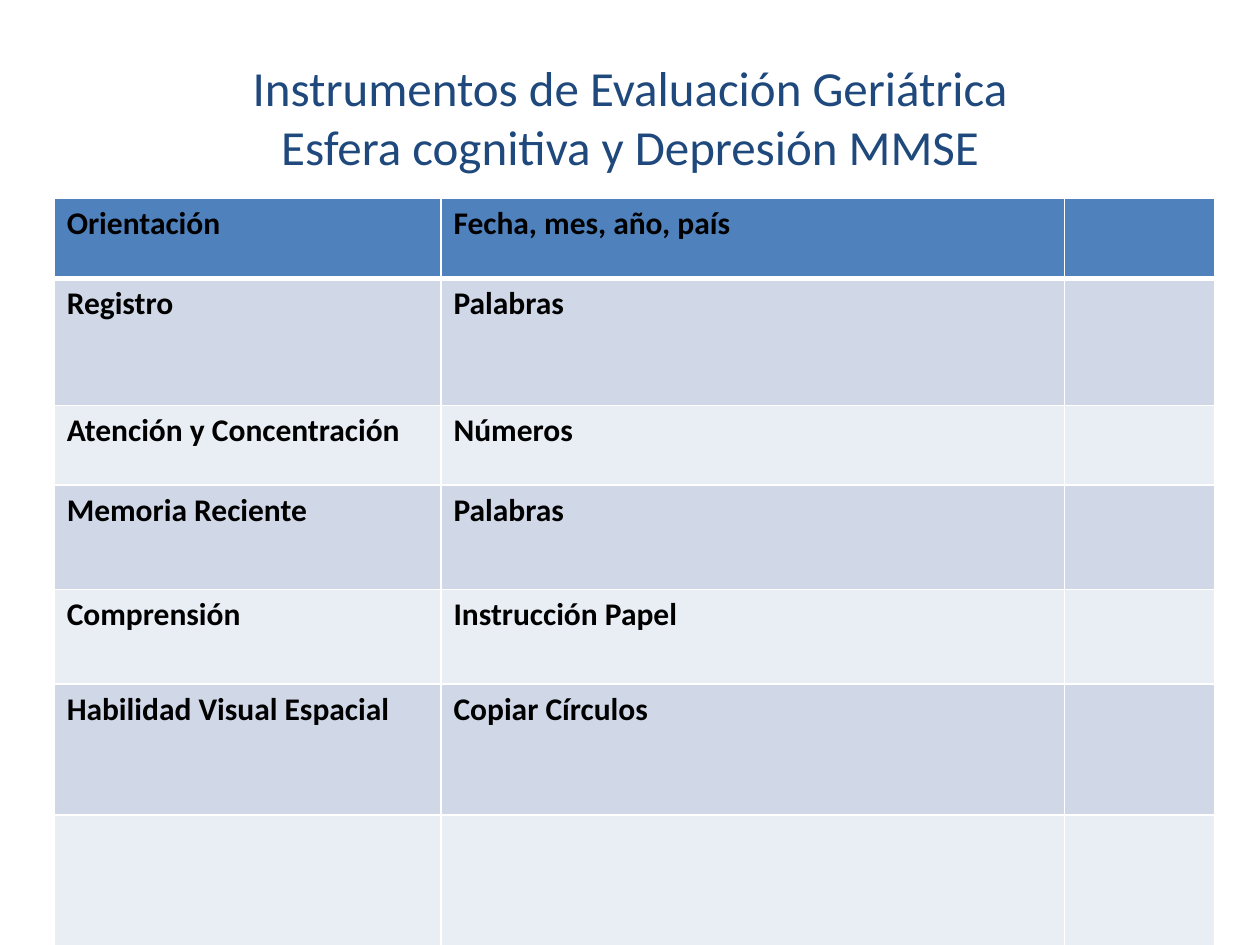
from pptx import Presentation
from pptx.dml.color import RGBColor
from pptx.enum.text import MSO_ANCHOR, PP_ALIGN
from pptx.oxml import parse_xml
from pptx.oxml.ns import nsdecls
from pptx.util import Inches, Pt

TITLE_LINES = ["Instrumentos de Evaluación Geriátrica",
               "Esfera cognitiva y Depresión MMSE"]
COLUMN_WIDTHS = [3.07, 4.95, 1.19]
# Row height, cognitive area, test
ROWS = [
    (0.64, "Orientación", "Fecha, mes, año, país"),
    (1.01, "Registro", "Palabras"),
    (0.63, "Atención y Concentración", "Números"),
    (0.83, "Memoria Reciente", "Palabras"),
    (0.75, "Comprensión", "Instrucción Papel"),
    (1.04, "Habilidad Visual Espacial", "Copiar Círculos"),
    (1.04, "", ""),
]


def rgb(color):
    return RGBColor.from_string(color)


class SlideBuilder:
    font = "Calibri"
    title_color = "1F497D"
    text_color = "000000"
    header_fill = "4F81BD"
    band_fills = ["E9EDF4", "D0D8E8"]
    border_color = "FFFFFF"

    def __init__(self, presentation):
        self.slide = presentation.slides.add_slide(presentation.slide_layouts[5])

    def add_run(self, paragraph, text, size, color, bold=False):
        run = paragraph.add_run()
        run.text = text
        run.font.name = self.font
        run.font.size = Pt(size)
        run.font.bold = bold
        run.font.color.rgb = rgb(color)

    def title(self, lines, left, top, width, height):
        shape = self.slide.shapes.title
        shape.left, shape.top = Inches(left), Inches(top)
        shape.width, shape.height = Inches(width), Inches(height)
        shape.text_frame.vertical_anchor = MSO_ANCHOR.MIDDLE
        paragraph = shape.text_frame.paragraphs[0]
        paragraph.alignment = PP_ALIGN.CENTER
        for index, line in enumerate(lines):
            if index:
                paragraph.add_line_break()
            self.add_run(paragraph, line, 28, self.title_color)

    def borders(self, cell, top, bottom):
        """Draw the four cell edges; top and bottom are widths in points."""
        properties = cell._tc.get_or_add_tcPr()
        for side, width in (("L", 1), ("R", 1), ("T", top), ("B", bottom)):
            properties.append(parse_xml(
                f'<a:ln{side} {nsdecls("a")} w="{Pt(width)}"><a:solidFill>'
                f'<a:srgbClr val="{self.border_color}"/></a:solidFill></a:ln{side}>'))

    def table(self, rows, column_widths, left, top):
        height = sum(row[0] for row in rows)
        table = self.slide.shapes.add_table(
            len(rows), len(column_widths), Inches(left), Inches(top),
            Inches(sum(column_widths)), Inches(height)).table
        table.horz_banding = False
        for column, width in zip(table.columns, column_widths):
            column.width = Inches(width)
        for index, (row_height, *texts) in enumerate(rows):
            row = table.rows[index]
            row.height = Inches(row_height)
            fill = self.band_fills[index % 2] if index else self.header_fill
            for cell in row.cells:
                self.borders(cell, top=3 if index == 1 else 1,
                             bottom=3 if index == 0 else 1)
                cell.fill.solid()
                cell.fill.fore_color.rgb = rgb(fill)
            for cell, text in zip(row.cells, texts):
                if text:
                    self.add_run(cell.text_frame.paragraphs[0], text, 18,
                                 self.text_color, bold=True)


def main():
    presentation = Presentation()
    presentation.slide_width = Inches(10)
    presentation.slide_height = Inches(7.5)
    builder = SlideBuilder(presentation)
    builder.title(TITLE_LINES, 0.5, 0.3, 9, 1.25)
    builder.table(ROWS, COLUMN_WIDTHS, 0.43, 1.57)
    presentation.save("out.pptx")


if __name__ == "__main__":
    main()
